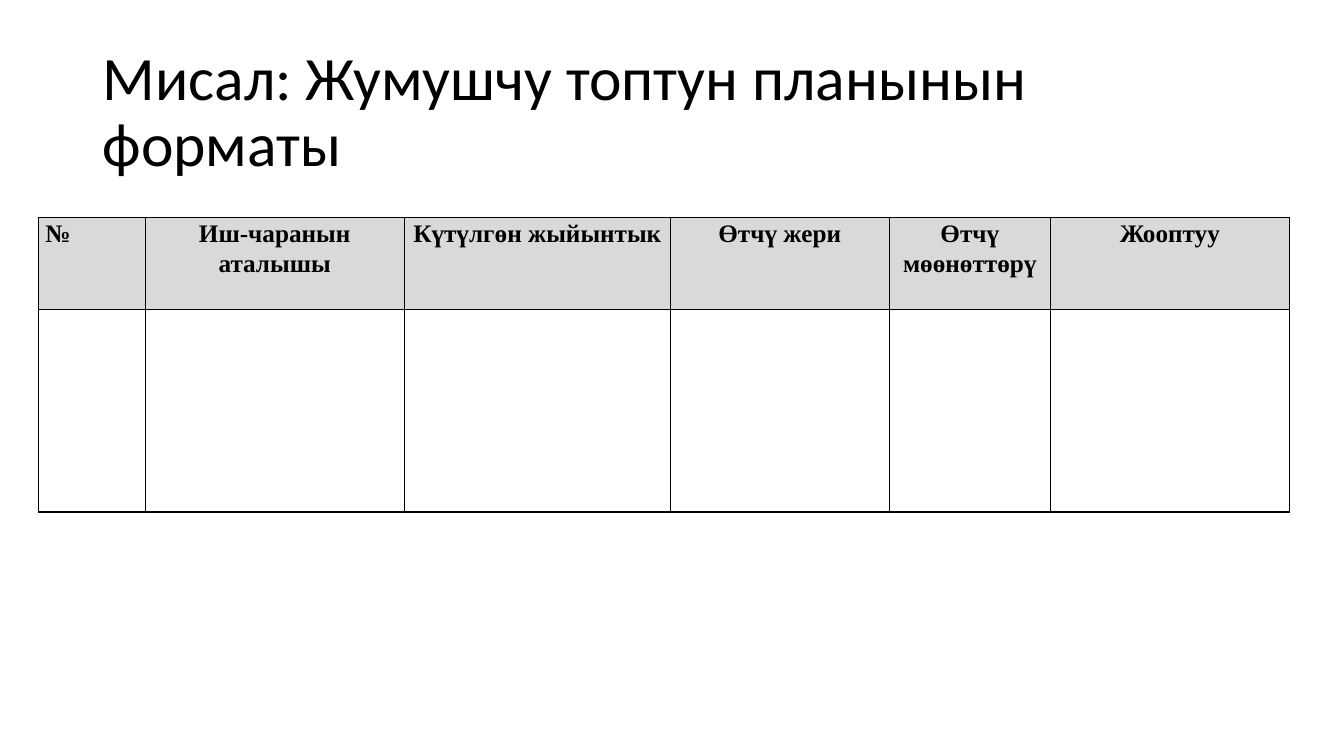
from lxml import etree
from pptx import Presentation
from pptx.dml.color import RGBColor
from pptx.enum.text import MSO_ANCHOR, PP_ALIGN
from pptx.oxml.ns import qn
from pptx.util import Inches, Pt

LEFT, CENTER = PP_ALIGN.LEFT, PP_ALIGN.CENTER
TOP, MIDDLE = MSO_ANCHOR.TOP, MSO_ANCHOR.MIDDLE
BLACK = RGBColor(0x00, 0x00, 0x00)
WHITE = RGBColor(0xFF, 0xFF, 0xFF)
GRAY = RGBColor(0xD9, 0xD9, 0xD9)

HEADS = ["№", "Иш-чаранын аталышы", "Күтүлгөн жыйынтык",
         "Өтчү жери", "Өтчү мөөнөттөрү", "Жооптуу"]
WIDTHS = [1.06, 2.57, 2.64, 2.17, 1.6, 2.37]
HEIGHTS = [0.91, 2.01]


class Page:
    title_font = "Calibri"
    table_font = "Times New Roman"
    border = Pt(1)

    def __init__(self, slide):
        self.slide = slide

    def style(self, para, font, size, bold=False):
        for run in para.runs:
            run.font.name = font
            run.font.size = Pt(size)
            run.font.bold = bold
            run.font.color.rgb = BLACK

    def title(self, text, left, top, width, height):
        box = self.slide.shapes.add_textbox(
            Inches(left), Inches(top), Inches(width), Inches(height))
        frame = box.text_frame
        frame.word_wrap = True
        frame.vertical_anchor = MIDDLE
        frame.text = text
        para = frame.paragraphs[0]
        para.line_spacing = 0.9
        self.style(para, self.title_font, 44)

    def edge(self, cell):
        props = cell._tc.get_or_add_tcPr()
        for side in ("lnL", "lnR", "lnT", "lnB"):
            line = etree.SubElement(props, qn("a:" + side), w=str(self.border))
            fill = etree.SubElement(line, qn("a:solidFill"))
            etree.SubElement(fill, qn("a:srgbClr"), val=str(BLACK))

    def cell(self, cell, text, align, color):
        self.edge(cell)
        cell.fill.solid()
        cell.fill.fore_color.rgb = color
        cell.margin_left = cell.margin_right = Inches(0.07)
        cell.margin_top = cell.margin_bottom = 0
        cell.vertical_anchor = TOP
        cell.text_frame.text = text
        para = cell.text_frame.paragraphs[0]
        para.alignment = align
        para.line_spacing = 1.07
        para.space_after = Pt(8)
        self.style(para, self.table_font, 18, True)

    def table(self, left, top, heads, widths, heights):
        grid = self.slide.shapes.add_table(
            len(heights), len(widths), Inches(left), Inches(top),
            Inches(sum(widths)), Inches(sum(heights))).table
        for row, height in zip(grid.rows, heights):
            row.height = Inches(height)
        for col, (head, width) in enumerate(zip(heads, widths)):
            grid.columns[col].width = Inches(width)
            align = CENTER if col else LEFT
            self.cell(grid.cell(0, col), head, align, GRAY)
            for row in range(1, len(heights)):
                self.cell(grid.cell(row, col), "", align, WHITE)


def main():
    deck = Presentation()
    deck.slide_width = Inches(13.33)
    deck.slide_height = Inches(7.5)
    page = Page(deck.slides.add_slide(deck.slide_layouts[6]))

    # Heading
    page.title("Мисал: Жумушчу топтун планынын форматы", 0.92, 0.4, 11.5, 1.45)

    # Plan form
    page.table(0.38, 2.16, HEADS, WIDTHS, HEIGHTS)

    deck.save("out.pptx")


if __name__ == "__main__":
    main()
